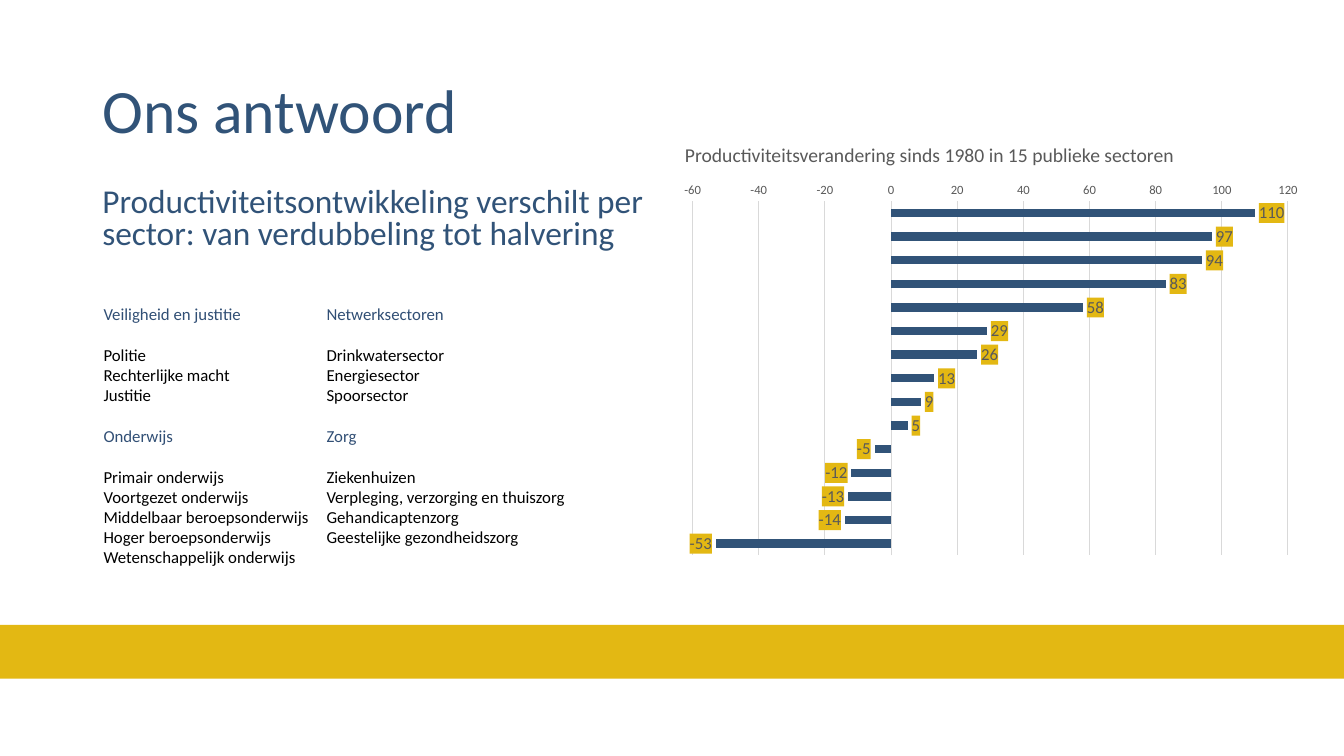
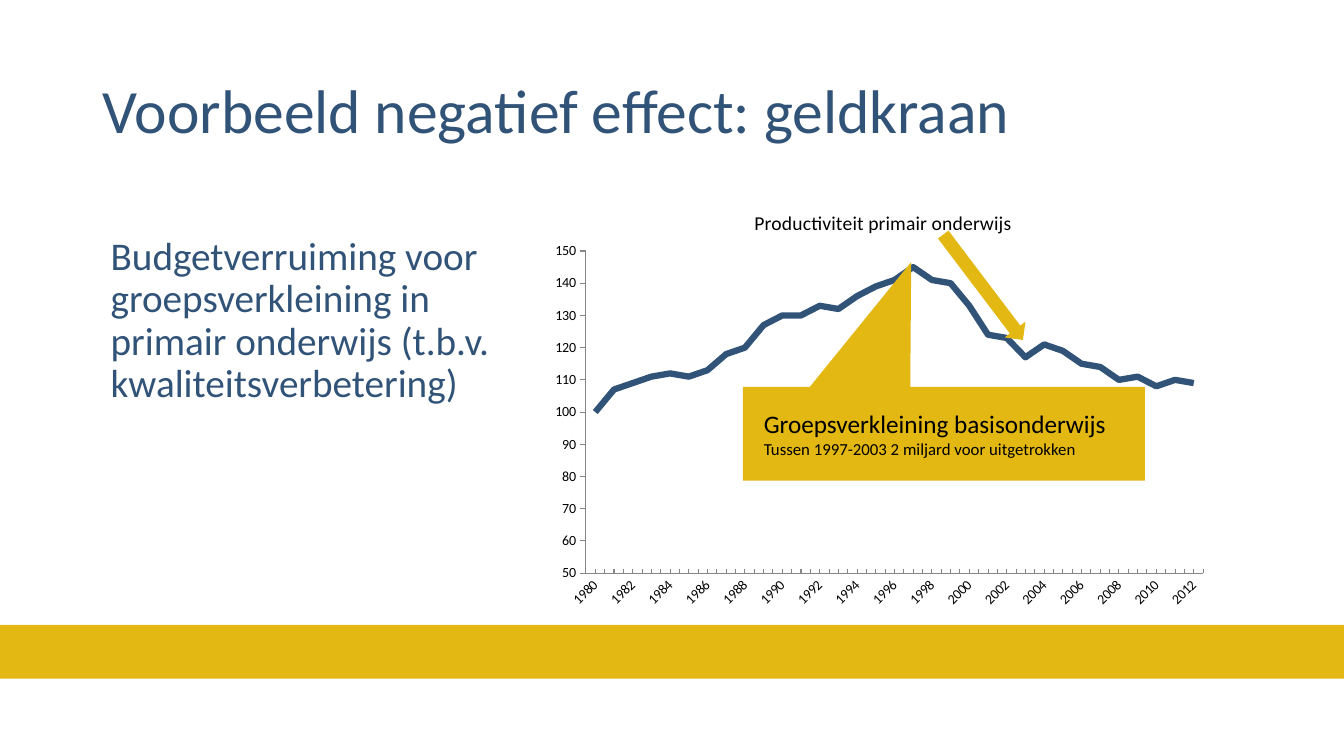
from lxml import etree
from pptx import Presentation
from pptx.chart.data import CategoryChartData
from pptx.dml.color import RGBColor
from pptx.enum.chart import (XL_AXIS_CROSSES as Crosses, XL_CHART_TYPE as ChartType,
                             XL_LABEL_POSITION as LabelPosition,
                             XL_TICK_LABEL_POSITION as TickLabels, XL_TICK_MARK as Tick)
from pptx.enum.shapes import MSO_SHAPE as Shape
from pptx.enum.text import MSO_ANCHOR as Anchor, PP_ALIGN as Align
from pptx.oxml import parse_xml
from pptx.oxml.ns import nsdecls, qn
from pptx.util import Cm, Pt

BLUE = RGBColor(0x31, 0x53, 0x78)
HEADING_BLUE = RGBColor(0x31, 0x4F, 0x75)
YELLOW = RGBColor(0xE3, 0xB8, 0x13)
BLACK = RGBColor(0, 0, 0)
GREY = RGBColor(0x59, 0x59, 0x59)
GRID = RGBColor(0xD9, 0xD9, 0xD9)
AXIS = RGBColor(0x86, 0x86, 0x86)
FONT = "Calibri"
WIDTH, HEIGHT = 33.87, 19.05

# Content
ANSWER = "Ons antwoord"
ANSWER_LEAD = "Productiviteitsontwikkeling verschilt per sector: van verdubbeling tot halvering"
SECTOR_CAPTION = "Productiviteitsverandering sinds 1980 in 15 publieke sectoren"
SECTOR_CHANGES = [110, 97, 94, 83, 58, 29, 26, 13, 9, 5, -5, -12, -13, -14, -53]
SECTOR_COLUMNS = [
    ((2.36, 7.54, 5.77, 7.44), [
        ("Veiligheid en justitie", ["Politie", "Rechterlijke macht", "Justitie"]),
        ("Onderwijs", ["Primair onderwijs", "Voortgezet onderwijs",
                       "Middelbaar beroepsonderwijs", "Hoger beroepsonderwijs",
                       "Wetenschappelijk onderwijs"]),
    ]),
    ((7.98, 7.54, 6.78, 6.93), [
        ("Netwerksectoren", ["Drinkwatersector", "Energiesector", "Spoorsector"]),
        ("Zorg", ["Ziekenhuizen", "Verpleging, verzorging en thuiszorg",
                  "Gehandicaptenzorg", "Geestelijke gezondheidszorg"]),
    ]),
]
EXAMPLE = "Voorbeeld negatief effect: geldkraan"
EXAMPLE_LEAD = ("Budgetverruiming voor groepsverkleining in primair onderwijs "
                "(t.b.v. kwaliteitsverbetering)")
SCHOOL_CAPTION = "Productiviteit primair onderwijs"
FIRST_YEAR = 1980
SCHOOL_INDEX = [100, 107, 109, 111, 112, 111, 113, 118, 120, 127, 130, 130, 133, 132, 136, 139,
                141, 145, 141, 140, 133, 124, 123, 117, 121, 119, 115, 114, 110, 111, 108, 110, 109]
CALLOUT = [("Groepsverkleining basisonderwijs", 18),
           ("Tussen 1997-2003 2 miljard voor uitgetrokken", 12)]


def cm(box):
    return [Cm(length) for length in box]


def style_font(font, size, color):
    font.name, font.size = FONT, Pt(size)
    font.color.rgb = color


def add_line(frame, text, size, color, first=False, before=0, spacing=None):
    line = frame.paragraphs[0] if first else frame.add_paragraph()
    if before and not first:
        line.space_before = Pt(before)
    if spacing:
        line.line_spacing = spacing
    run = line.add_run()
    run.text = text
    style_font(run.font, size, color)
    return line


def add_frame(slide, box, wrap=True):
    frame = slide.shapes.add_textbox(*cm(box)).text_frame
    frame.word_wrap = wrap
    return frame


def add_yellow(slide, kind, box):
    shape = slide.shapes.add_shape(kind, *cm(box))
    shape.shadow.inherit = False
    shape.fill.solid()
    shape.fill.fore_color.rgb = YELLOW
    shape.line.fill.background()
    return shape


def add_slide(deck, title):
    """Blank slide with the shared band and title."""
    slide = deck.slides.add_slide(deck.slide_layouts[6])
    add_yellow(slide, Shape.RECTANGLE, (0, 15.75, WIDTH, 1.35))
    frame = add_frame(slide, (2.33, 1.01, 29.21, 3.68))
    frame.vertical_anchor = Anchor.MIDDLE
    add_line(frame, title, 44, BLUE, first=True, spacing=0.9)
    return slide


def manual_layout(inner=False, **fractions):
    target = '<c:layoutTarget val="inner"/>' if inner else ""
    modes = "".join(f'<c:{side}Mode val="edge"/>' for side in "xy")
    places = "".join(f'<c:{side} val="{part}"/>' for side, part in fractions.items())
    return parse_xml(f'<c:layout {nsdecls("c")}><c:manualLayout>{target}{modes}{places}'
                     '</c:manualLayout></c:layout>')


def add_chart(slide, kind, box, categories, values, plot_place):
    chart_data = CategoryChartData()
    chart_data.categories = categories
    chart_data.add_series("Productiviteit", values)
    chart = slide.shapes.add_chart(kind, *cm(box), chart_data).chart
    chart.has_legend = chart.has_title = False
    style_font(chart.font, 10, BLACK)
    chart.plots[0].vary_by_categories = False
    area = chart.plots[0]._element.getparent()
    for old in area.findall(qn("c:layout")):
        area.remove(old)
    area.insert(0, manual_layout(True, **plot_place))
    return chart


def set_axis(axis, low, high, step):
    axis.minimum_scale, axis.maximum_scale, axis.major_unit = low, high, step


def add_sector_chart(slide):
    chart = add_chart(slide, ChartType.BAR_CLUSTERED, (16.94, 4.6, 16.15, 10.16),
                      [str(n + 1) for n in range(len(SECTOR_CHANGES))], SECTOR_CHANGES,
                      {"x": 0.032, "y": 0.046, "w": 0.929, "h": 0.879})
    sectors, change = chart.category_axis, chart.value_axis
    sectors.reverse_order = True
    sectors.crosses = Crosses.MAXIMUM
    sectors.tick_label_position = TickLabels.NONE
    sectors.major_tick_mark = change.major_tick_mark = Tick.NONE
    set_axis(change, -60, 120, 20)
    change.format.line.fill.background()
    style_font(change.tick_labels.font, 9, GREY)
    for line in (sectors.format.line, change.major_gridlines.format.line):
        line.color.rgb, line.width = GRID, Pt(0.75)
    # Bars and highlighted values
    plot = chart.plots[0]
    plot.gap_width = 182
    bars = plot.series[0]
    bars.invert_if_negative = False
    bars.format.fill.solid()
    bars.format.fill.fore_color.rgb = BLUE
    labels = bars.data_labels
    labels.show_value = True
    labels.position = LabelPosition.OUTSIDE_END
    style_font(labels.font, 12, GREY)
    labels._element.find(qn("c:txPr")).addprevious(parse_xml(
        f'<c:spPr {nsdecls("c", "a")}><a:solidFill><a:srgbClr val="{YELLOW}"/>'
        '</a:solidFill></c:spPr>'))


def add_school_chart(slide):
    years = [str(FIRST_YEAR + n) for n in range(len(SCHOOL_INDEX))]
    chart = add_chart(slide, ChartType.LINE, (13.66, 4.7, 17.02, 10.84), years, SCHOOL_INDEX,
                      {"x": 0.065, "y": 0.15, "w": 0.914, "h": 0.749})
    chart.has_title = True
    add_line(chart.chart_title.text_frame, SCHOOL_CAPTION, 14, BLACK, first=True).font.bold = False
    chart.chart_title.text_frame.paragraphs[0].runs[0].font.bold = False
    title = chart.chart_title._element
    for old in title.findall(qn("c:layout")):
        title.remove(old)
    title.find(qn("c:tx")).addnext(manual_layout(x=0.309, y=0.045))
    # Axes
    year_axis, index_axis = chart.category_axis, chart.value_axis
    year_axis.major_tick_mark, year_axis.minor_tick_mark = Tick.NONE, Tick.INSIDE
    index_axis.major_tick_mark = Tick.OUTSIDE
    index_axis.has_major_gridlines = False
    set_axis(index_axis, 50, 150, 10)
    for axis in (year_axis, index_axis):
        style_font(axis.tick_labels.font, 10, BLACK)
        axis.format.line.color.rgb, axis.format.line.width = AXIS, Pt(0.75)
    years_xml = year_axis._element
    years_xml.find(qn("c:txPr")).find(qn("a:bodyPr")).set("rot", "-2700000")
    skip = etree.Element(qn("c:tickLblSkip"), val="2")
    years_xml.find(qn("c:noMultiLvlLbl")).addprevious(skip)
    # Line
    index = chart.plots[0].series[0]
    index.smooth = False
    index.format.line.color.rgb, index.format.line.width = BLUE, Pt(4.5)


def add_sector_column(slide, box, groups):
    frame = add_frame(slide, box)
    for group, (heading, sectors) in enumerate(groups):
        add_line(frame, heading, 12, HEADING_BLUE, first=group == 0, before=14.6)
        for row, sector in enumerate(sectors):
            add_line(frame, sector, 12, BLACK, before=0 if row else 14.6)


def build_answer(deck):
    slide = add_slide(deck, ANSWER)
    add_line(add_frame(slide, (2.33, 4.6, 14.6, 2.44)), ANSWER_LEAD, 23.8, BLUE,
             first=True, spacing=0.8)
    add_sector_chart(slide)
    for box, groups in SECTOR_COLUMNS:
        add_sector_column(slide, box, groups)
    caption = add_frame(slide, (16.94, 3.48, 12.98, 0.86), wrap=False)
    add_line(caption, SECTOR_CAPTION, 14, GREY, first=True).alignment = Align.CENTER


def build_example(deck):
    slide = add_slide(deck, EXAMPLE)
    add_school_chart(slide)
    # Callout pointing at the peak
    callout = add_yellow(slide, Shape.RECTANGULAR_CALLOUT, (18.72, 9.75, 10.13, 2.36))
    callout.adjustments[0], callout.adjustments[1] = -0.081, -1.834
    callout.text_frame.vertical_anchor = Anchor.MIDDLE
    for row, (text, size) in enumerate(CALLOUT):
        line = add_line(callout.text_frame, text, size, BLACK, first=row == 0)
        line.alignment = Align.LEFT
        line._p.get_or_add_pPr().set("marL", str(Cm(0.28)))
    # Arrow along the decline
    add_yellow(slide, Shape.RIGHT_ARROW, (23.11, 6.91, 3.33, 0.66)).rotation = 52.9
    add_line(add_frame(slide, (2.54, 5.84, 11.13, 7.44)), EXAMPLE_LEAD, 28, BLUE,
             first=True, spacing=0.9)


def main():
    deck = Presentation()
    deck.slide_width, deck.slide_height = Cm(WIDTH), Cm(HEIGHT)
    build_answer(deck)
    build_example(deck)
    deck.save("out.pptx")


if __name__ == "__main__":
    main()
